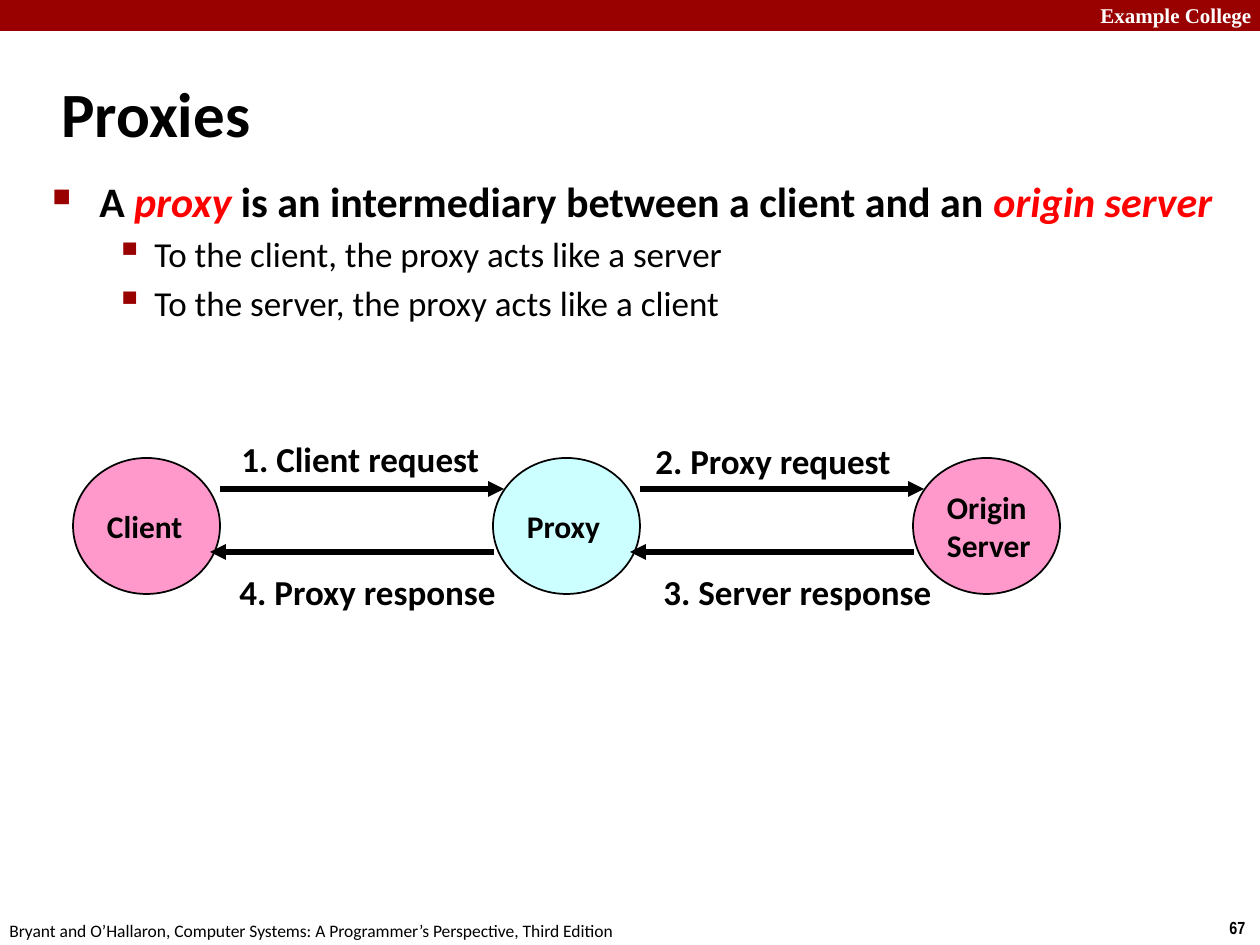
import pptx
import pptx.util
import pptx.dml.color
import pptx.enum.shapes
import pptx.enum.text
import pptx.oxml.ns
import lxml.etree

RGB = pptx.dml.color.RGBColor
BLACK = RGB(0x00, 0x00, 0x00)
WHITE = RGB(0xFF, 0xFF, 0xFF)
MAROON = RGB(0x99, 0x00, 0x00)
RED = RGB(0xFF, 0x00, 0x00)
PINK = RGB(0xFF, 0x99, 0xCC)
CYAN = RGB(0xCC, 0xFF, 0xFF)
FONT = "Calibri"
SHAPE = pptx.enum.shapes.MSO_SHAPE
ANCHOR = pptx.enum.text.MSO_ANCHOR
LEFT = pptx.enum.text.PP_ALIGN.LEFT


def px(*vals):
    """Turn pixels into EMU."""
    return [pptx.util.Emu(round(val * 914400 / 126)) for val in vals]


def add_tag(node, name, **attrs):
    """Append a drawing element to an XML node."""
    tag = pptx.oxml.ns.qn(f"a:{name}")
    return lxml.etree.SubElement(node, tag, attrs)


def add_run(para, text, size, bold=True, color=BLACK, face=FONT, slant=False):
    """Add one styled run to a paragraph."""
    run = para.add_run()
    run.text = text
    font = run.font
    font.size = pptx.util.Pt(size)
    font.name = face
    font.bold = bold
    font.italic = slant
    font.color.rgb = color


def add_text(slide, box, text, size, wrap=False, anchor=ANCHOR.TOP, **style):
    """Add a text box with a single line."""
    frame = slide.shapes.add_textbox(*px(*box)).text_frame
    frame.word_wrap = wrap
    frame.vertical_anchor = anchor
    add_run(frame.paragraphs[0], text, size, **style)


def add_shape(slide, kind, box, fill):
    """Add a flat filled shape without an outline."""
    shape = slide.shapes.add_shape(kind, *px(*box))
    shape.shadow.inherit = False
    shape.fill.solid()
    shape.fill.fore_color.rgb = fill
    shape.line.fill.background()
    return shape


def add_node(slide, left, lines, fill):
    """Add an outlined ellipse holding lines of text."""
    shape = add_shape(slide, SHAPE.OVAL, (left, 458, 147, 136), fill)
    shape.line.color.rgb = BLACK
    shape.line.width = pptx.util.Pt(1)
    frame = shape.text_frame
    frame.word_wrap = False
    frame.vertical_anchor = ANCHOR.MIDDLE
    for num, line in enumerate(lines):
        para = frame.add_paragraph() if num else frame.paragraphs[0]
        para.alignment = LEFT
        add_run(para, line, 18)


def add_arrow(slide, start, end, top):
    """Add a level arrow that points at its end."""
    kind = pptx.enum.shapes.MSO_CONNECTOR.STRAIGHT
    line = slide.shapes.add_connector(kind, *px(start, top, end, top))
    line.line.color.rgb = BLACK
    line.line.width = pptx.util.Pt(3)
    add_tag(line.line._get_or_add_ln(), "tailEnd", type="triangle")
    add_tag(line._element.spPr, "effectLst")


def set_bullet(para, level, mark, scale, left, hang):
    """Give a paragraph a maroon hanging bullet."""
    para.level = level
    props = para._p.get_or_add_pPr()
    left, hang = px(left, hang)
    props.set("marL", str(left))
    props.set("indent", str(-hang))
    add_tag(add_tag(props, "buClr"), "srgbClr", val=str(MAROON))
    add_tag(props, "buSzPct", val=str(scale * 1000))
    add_tag(props, "buChar", char=mark)


def add_body(slide):
    """Add the bulleted statement and its two points."""
    frame = slide.shapes.add_textbox(*px(40, 169, 1200, 546)).text_frame
    frame.word_wrap = True
    para = frame.paragraphs[0]
    para.space_before = pptx.util.Pt(5)
    set_bullet(para, 0, "■", 60, 47, 47)
    add_run(para, "A ", 24)
    add_run(para, "proxy ", 24, color=RED, slant=True)
    add_run(para, "is an intermediary between a client and an ", 24)
    add_run(para, "origin server", 24, color=RED, slant=True)
    for peer, role in (("client", "server"), ("server", "client")):
        para = frame.add_paragraph()
        para.space_before = pptx.util.Pt(4)
        set_bullet(para, 1, "▪", 110, 102, 39)
        text = f"To the {peer}, the proxy acts like a {role}"
        add_run(para, text, 20, bold=False)


def add_flow(slide):
    """Add the three nodes, four arrows and their labels."""
    nodes = (
        (["Client"], PINK),
        (["Proxy"], CYAN),
        (["Origin", "Server"], PINK),
    )
    for num, (lines, fill) in enumerate(nodes):
        add_node(slide, 73 + 420 * num, lines, fill)
    for left in (220, 640):
        add_arrow(slide, left, left + 284, 489)
        add_arrow(slide, left + 274, left - 10, 552)
    labels = (
        (229, 431, 266, "1. Client request"),
        (643, 433, 265, "2. Proxy request"),
        (651, 564, 296, "3. Server response"),
        (227, 564, 286, "4. Proxy response"),
    )
    for left, top, width, text in labels:
        add_text(slide, (left, top, width, 55), text, 20)


def add_frame(slide):
    """Add the top band, page number and book line."""
    add_shape(slide, SHAPE.RECTANGLE, (0, 0, 1260, 31), MAROON)
    add_text(slide, (1088, -4, 180, 38), "Example College", 12, wrap=True,
             color=WHITE, face="Times New Roman")
    add_text(slide, (1217, 911, 43, 34), "67", 10, face="Arial Narrow")
    book = ("Bryant and O’Hallaron, Computer Systems: "
            "A Programmer’s Perspective, Third Edition")
    add_text(slide, (-3, 914, 640, 34), book, 10, bold=False)


def main():
    """Build and save the slide."""
    deck = pptx.Presentation()
    deck.slide_width, deck.slide_height = px(1260, 945)
    slide = deck.slides.add_slide(deck.slide_layouts[6])
    add_frame(slide)
    add_text(slide, (49, 60, 1046, 105), "Proxies", 36, wrap=True,
             anchor=ANCHOR.MIDDLE)
    add_body(slide)
    add_flow(slide)
    deck.save("out.pptx")


if __name__ == "__main__":
    main()
